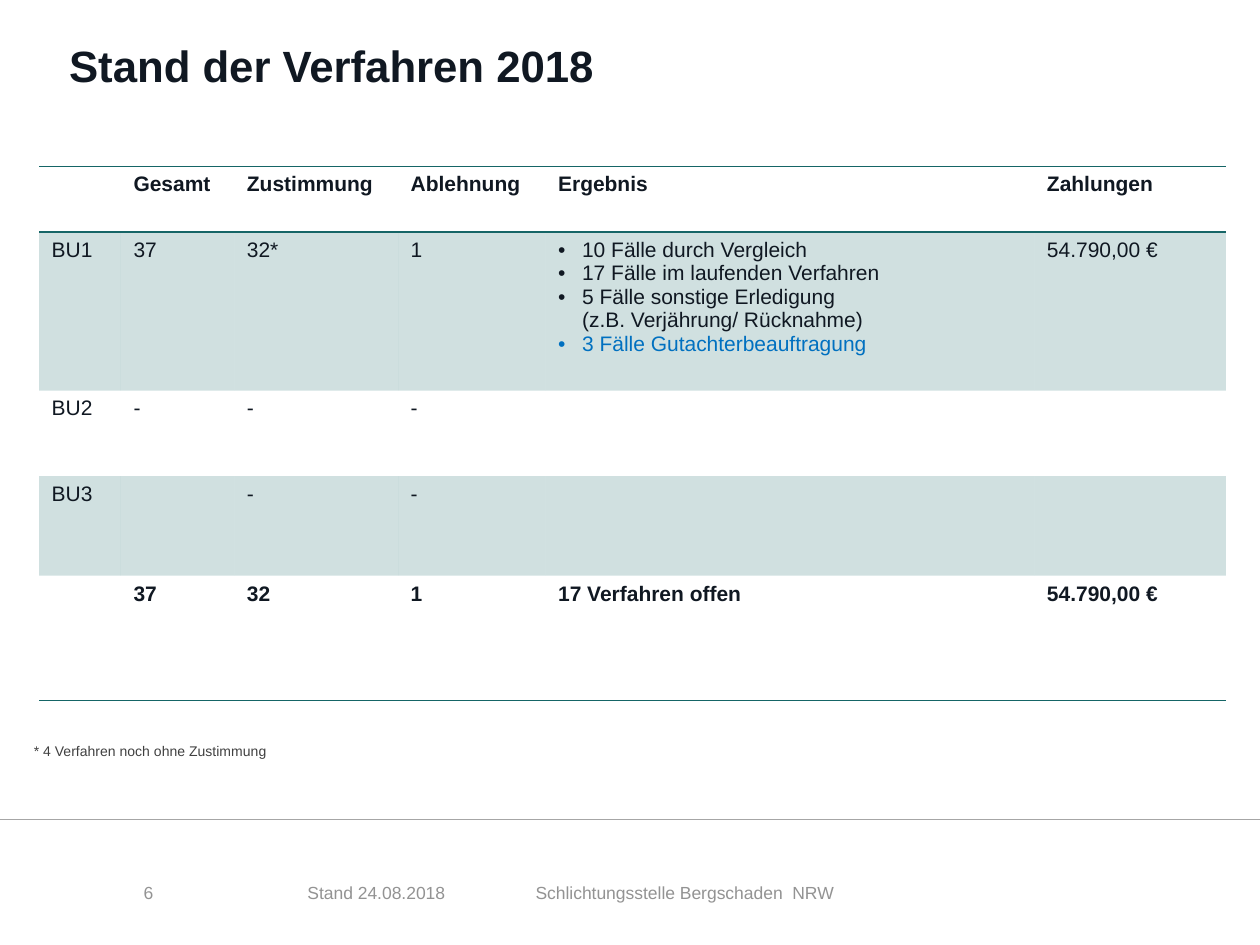
from lxml import etree
from pptx import Presentation
from pptx.dml.color import RGBColor
from pptx.enum.shapes import MSO_CONNECTOR
from pptx.oxml.ns import qn
from pptx.util import Inches, Pt

STRAIGHT = MSO_CONNECTOR.STRAIGHT
INK = RGBColor(0x10, 0x18, 0x22)
TEAL = RGBColor(0x15, 0x65, 0x66)
BLUE = RGBColor(0x00, 0x70, 0xC0)
FOOTER_GRAY = RGBColor(0x93, 0x93, 0x93)
NOTE_GRAY = RGBColor(0x40, 0x40, 0x40)
RULE_GRAY = RGBColor(0xA6, 0xA6, 0xA6)
FONT = "Arial"
NO_STYLE = "{2D5ABB26-0587-4C30-8999-92F81FD0307C}"
HANG = 0.19

COLUMN_WIDTHS = [0.65, 0.9, 1.3, 1.17, 3.88, 1.52]
ROW_HEIGHTS = [0.52, 1.26, 0.68, 0.79, 0.99]
RESULT_CELL = (1, 4)
BOLD_ROWS = {0, 4}
SHADED_ROWS = {1, 3}
RULES = {0: ("a:lnT", "a:lnB"), 4: ("a:lnB",)}
ROWS = [
    ["", "Gesamt", "Zustimmung", "Ablehnung", "Ergebnis", "Zahlungen"],
    ["BU1", "37", "32*", "1", "", "54.790,00 €"],
    ["BU2", "-", "-", "-", "", ""],
    ["BU3", "", "-", "-", "", ""],
    ["", "37", "32", "1", "17 Verfahren offen", "54.790,00 €"],
]
RESULTS = [  # text, bulleted, colour
    ("10 Fälle durch Vergleich", True, INK),
    ("17 Fälle im laufenden Verfahren", True, INK),
    ("5 Fälle sonstige Erledigung", True, INK),
    ("(z.B. Verjährung/ Rücknahme)", False, INK),
    ("3 Fälle Gutachterbeauftragung", True, BLUE),
]
FOOTERS = [
    (1.14, 1.3, "6"),
    (2.44, 1.17, "Stand 24.08.2018"),
    (4.25, 3.88, "Schlichtungsstelle Bergschaden  NRW"),
]


def write(para, text, size=12, color=INK, bold=False):
    para.font.size = Pt(size)
    para.font.name = FONT
    if text:
        span = para.add_run()
        span.text = text
        span.font.size = Pt(size)
        span.font.name = FONT
        span.font.bold = bold
        span.font.color.rgb = color


def add_text(page, left, top, width, height, text, inset=(0.1, 0.05), **style):
    box = page.shapes.add_textbox(Inches(left), Inches(top), Inches(width), Inches(height))
    frame = box.text_frame
    frame.word_wrap = True
    frame.margin_left = frame.margin_right = Inches(inset[0])
    frame.margin_top = frame.margin_bottom = Inches(inset[1])
    write(frame.paragraphs[0], text, **style)


def add_rule(page, y):
    rule = page.shapes.add_connector(STRAIGHT, 0, Inches(y), Inches(10), Inches(y))
    rule.line.color.rgb = RULE_GRAY
    rule.line.width = Pt(0.5)
    etree.SubElement(rule._element.spPr, qn("a:effectLst"))


def indent(para, bulleted):
    properties = para._p.get_or_add_pPr()
    properties.set("marL", str(Inches(HANG)))
    properties.set("indent", str(-Inches(HANG) if bulleted else 0))
    if bulleted:
        etree.SubElement(properties, qn("a:buFont"), typeface=FONT)
        etree.SubElement(properties, qn("a:buChar"), char="•")


def draw_borders(cell, sides):
    properties = cell._tc.get_or_add_tcPr()
    for side in sides:
        border = etree.SubElement(properties, qn(side), w=str(Pt(1)))
        fill = etree.SubElement(border, qn("a:solidFill"))
        etree.SubElement(fill, qn("a:srgbClr"), val=str(TEAL))


def shade(cell):
    """Fill the cell with teal at 20 percent opacity."""
    cell.fill.solid()
    cell.fill.fore_color.rgb = TEAL
    color = cell._tc.tcPr.find(qn("a:solidFill")).find(qn("a:srgbClr"))
    etree.SubElement(color, qn("a:alpha"), val="20000")


def write_results(frame):
    for index, (text, bulleted, color) in enumerate(RESULTS):
        para = frame.add_paragraph() if index else frame.paragraphs[0]
        indent(para, bulleted)
        write(para, text, color=color)


def add_case_table(page):
    frame = page.shapes.add_table(
        len(ROWS), len(COLUMN_WIDTHS), Inches(0.31), Inches(1.32),
        Inches(sum(COLUMN_WIDTHS)), Inches(sum(ROW_HEIGHTS)))
    table = frame.table
    table.first_row = table.horz_banding = False
    table._tbl.tblPr.find(qn("a:tableStyleId")).text = NO_STYLE
    for column, width in zip(table.columns, COLUMN_WIDTHS):
        column.width = Inches(width)
    for r, (row, height) in enumerate(zip(table.rows, ROW_HEIGHTS)):
        row.height = Inches(height)
        for c, cell in enumerate(row.cells):
            draw_borders(cell, RULES.get(r, ()))
            if r in SHADED_ROWS:
                shade(cell)
            else:
                cell.fill.background()
            if (r, c) == RESULT_CELL:
                write_results(cell.text_frame)
            else:
                write(cell.text_frame.paragraphs[0], ROWS[r][c], bold=r in BOLD_ROWS)


def main():
    deck = Presentation()
    deck.slide_width, deck.slide_height = Inches(10), Inches(7.5)
    page = deck.slides.add_slide(deck.slide_layouts[6])
    add_rule(page, 6.5)
    add_text(page, 0.45, 0.26, 8.89, 0.52, "Stand der Verfahren 2018", size=25, bold=True)
    for left, width, text in FOOTERS:
        add_text(page, left, 7, width, 0.21, text, inset=(0, 0), size=10, color=FOOTER_GRAY)
    add_case_table(page)
    add_text(page, 0.17, 5.84, 7.4, 0.24, "* 4 Verfahren noch ohne Zustimmung",
             size=8, color=NOTE_GRAY)
    deck.save("out.pptx")


if __name__ == "__main__":
    main()
